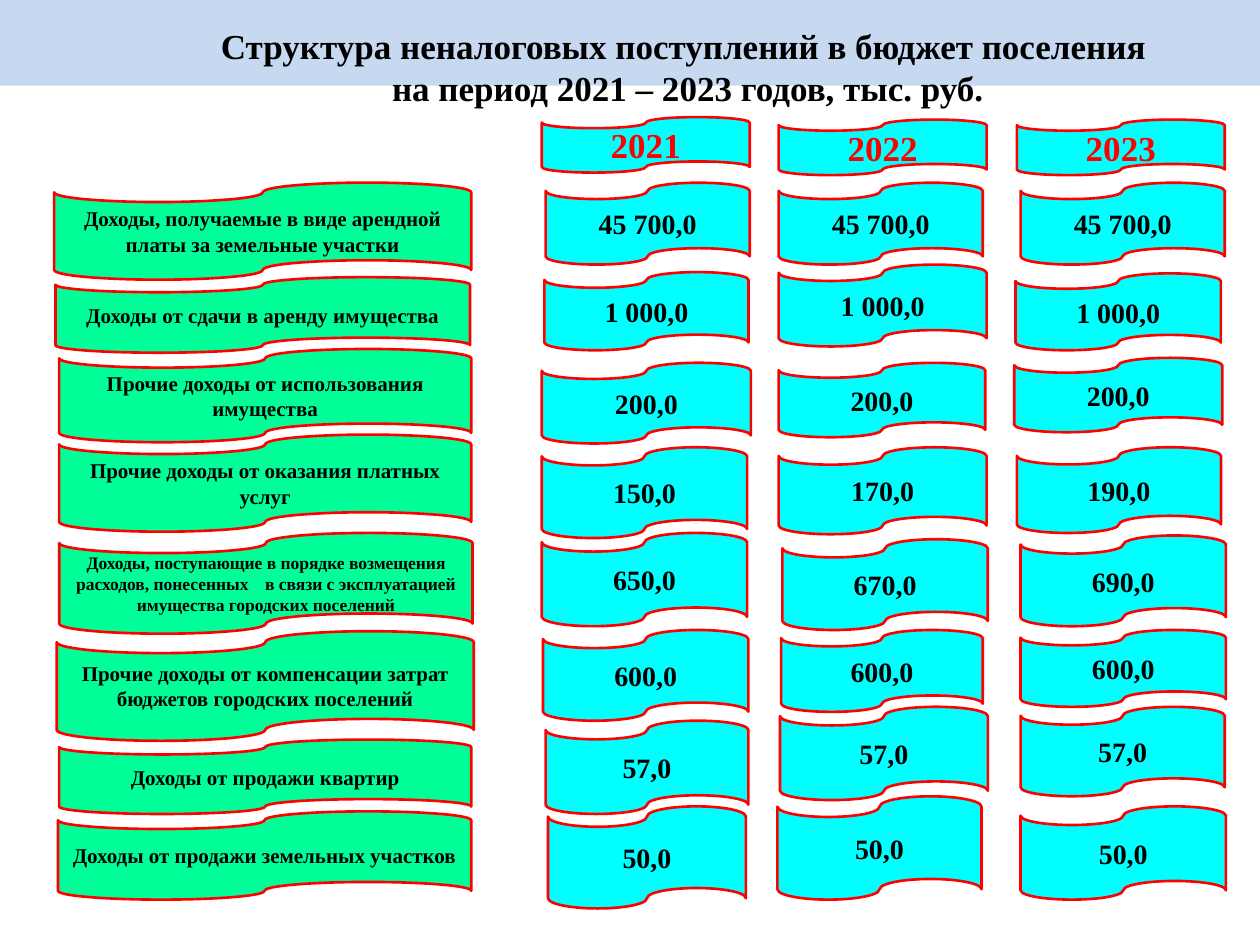
from pptx import Presentation
from pptx import util as u
from pptx.dml import color
from pptx.enum import shapes, text

YEARS = [("2021", (4.3, 0.93, 1.65, 0.44)), ("2022", (6.18, 0.95, 1.65, 0.44)),
         ("2023", (8.07, 0.95, 1.65, 0.44))]

INCOME_ROWS = [
    ("Доходы, получаемые в виде арендной платы за земельные участки", (0.43, 1.45, 3.31, 0.77),
     [("45 700,0", (4.33, 1.45, 1.62, 0.65)), ("45 700,0", (6.18, 1.45, 1.62, 0.65)),
      ("45 700,0", (8.1, 1.45, 1.62, 0.65))]),
    ("Доходы от сдачи в аренду имущества", (0.44, 2.2, 3.29, 0.6),
     [("1 000,0", (4.32, 2.16, 1.62, 0.62)), ("1 000,0", (6.18, 2.1, 1.65, 0.65)),
      ("1 000,0", (8.06, 2.17, 1.63, 0.61))]),
    ("Прочие доходы от использования имущества", (0.47, 2.77, 3.27, 0.74),
     [("200,0", (4.3, 2.88, 1.66, 0.64)), ("200,0", (6.18, 2.88, 1.64, 0.59)),
      ("200,0", (8.05, 2.84, 1.65, 0.59))]),
    ("Прочие доходы от оказания платных услуг", (0.47, 3.45, 3.27, 0.77),
     [("150,0", (4.3, 3.55, 1.63, 0.72)), ("170,0", (6.18, 3.55, 1.65, 0.69)),
      ("190,0", (8.07, 3.55, 1.62, 0.68))]),
    ("Доходы, поступающие в порядке возмещения расходов, понесенных\tв связи с "
     "эксплуатацией имущества городских поселений", (0.47, 4.23, 3.28, 0.8),
     [("650,0", (4.3, 4.23, 1.63, 0.74)), ("670,0", (6.21, 4.28, 1.63, 0.72)),
      ("690,0", (8.1, 4.25, 1.63, 0.72))]),
    ("Прочие доходы от компенсации затрат бюджетов городских поселений", (0.45, 5.01, 3.31, 0.87),
     [("600,0", (4.31, 5, 1.63, 0.72)), ("600,0", (6.2, 5, 1.6, 0.65)),
      ("600,0", (8.1, 5, 1.63, 0.61))]),
    ("Доходы от продажи квартир", (0.47, 5.87, 3.27, 0.59),
     [("57,0", (4.33, 5.72, 1.61, 0.74)), ("57,0", (6.19, 5.61, 1.65, 0.74)),
      ("57,0", (8.1, 5.61, 1.62, 0.71))]),
    ("Доходы от продажи земельных участков", (0.46, 6.44, 3.28, 0.7),
     [("50,0", (4.35, 6.4, 1.57, 0.81)), ("50,0", (6.17, 6.32, 1.62, 0.82)),
      ("50,0", (8.1, 6.4, 1.63, 0.74))]),
]


def rgb(value):
    return color.RGBColor.from_string(value)


class IncomeSlide:
    """Draws the income structure with one shared style."""

    label_fill, value_fill, band_fill = "00FF99", "00FFFF", "C6D9F1"
    outline, ink = "FF0000", "000000"
    font = {"name": "Times New Roman", "bold": True}

    def __init__(self, presentation):
        self.slide = presentation.slides.add_slide(presentation.slide_layouts[6])

    def add_text(self, shape, content, size, ink):
        frame = shape.text_frame
        frame.word_wrap = True
        frame.vertical_anchor = text.MSO_ANCHOR.MIDDLE
        paragraph = frame.paragraphs[0]
        paragraph.text = content
        paragraph.alignment = text.PP_ALIGN.CENTER
        for run in paragraph.runs:
            for name, value in {**self.font, "size": u.Pt(size)}.items():
                setattr(run.font, name, value)
            run.font.color.rgb = rgb(ink)

    def add_shape(self, kind, box, fill):
        shape = self.slide.shapes.add_shape(kind, *map(u.Inches, box))
        shape.shadow.inherit = False
        shape.fill.solid()
        shape.fill.fore_color.rgb = rgb(fill)
        return shape

    def band(self, box):
        self.add_shape(shapes.MSO_SHAPE.RECTANGLE, box, self.band_fill).line.fill.background()

    def title(self, content, box):
        self.add_text(self.slide.shapes.add_textbox(*map(u.Inches, box)), content, 20, self.ink)

    def tape(self, content, box, fill, size, ink=ink):
        shape = self.add_shape(shapes.MSO_SHAPE.FLOWCHART_PUNCHED_TAPE, box, fill)
        shape.line.color.rgb = rgb(self.outline)
        shape.line.width = u.Pt(1.5)
        self.add_text(shape, content, size, ink)

    def label(self, content, box):
        self.tape(content, box, self.label_fill, 10 if len(content) > 80 else 12)

    def value(self, content, box):
        self.tape(content, box, self.value_fill, 16)

    def year(self, content, box):
        self.tape(content, box, self.value_fill, 20, self.outline)


def main():
    presentation = Presentation()
    presentation.slide_width, presentation.slide_height = u.Inches(10), u.Inches(7.5)
    income = IncomeSlide(presentation)
    income.band((0, 0, 10, 0.68))
    income.title("Структура неналоговых поступлений в бюджет поселения \v"
                 "на период 2021 – 2023 годов, тыс. руб.", (0.96, 0.14, 9, 0.78))
    for name, box in YEARS:
        income.year(name, box)
    for name, box, values in INCOME_ROWS:
        income.label(name, box)
        for amount, place in values:
            income.value(amount, place)
    presentation.save("out.pptx")


if __name__ == "__main__":
    main()
